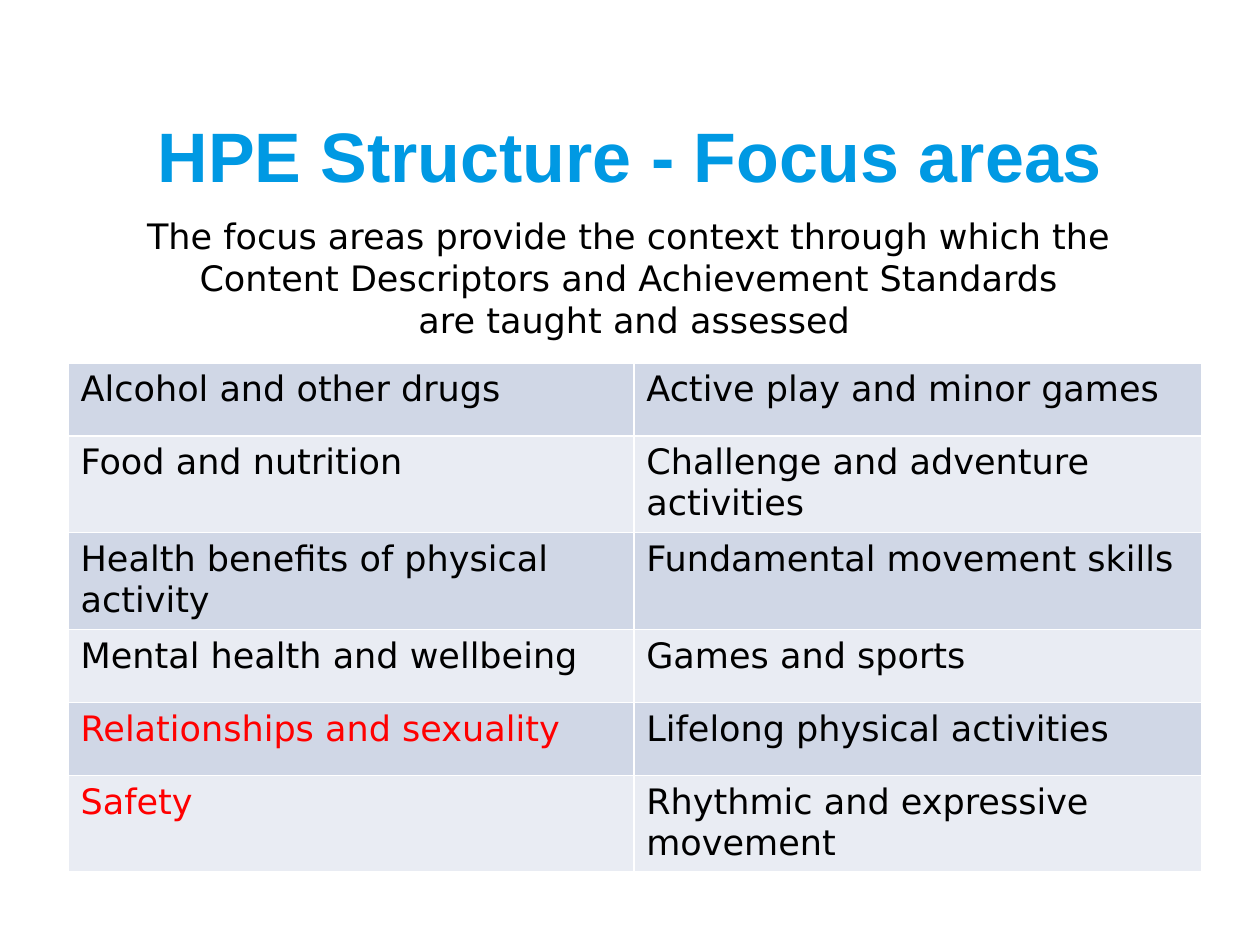
from lxml import etree
from pptx import Presentation
from pptx.dml.color import RGBColor
from pptx.enum.text import MSO_ANCHOR, PP_ALIGN
from pptx.oxml.ns import qn
from pptx.util import Inches, Pt

CENTER = PP_ALIGN.CENTER
TOP, MIDDLE = MSO_ANCHOR.TOP, MSO_ANCHOR.MIDDLE

TITLE = ["HPE Structure - Focus areas"]
INTRO = [
    "The focus areas provide the context through which the ",
    "Content Descriptors and Achievement Standards ",
    "are taught and assessed",
]
AREAS = [
    ("Alcohol and other drugs", "Active play and minor games"),
    ("Food and nutrition", "Challenge and adventure activities"),
    ("Health benefits of physical activity", "Fundamental movement skills"),
    ("Mental health and wellbeing", "Games and sports"),
    ("Relationships and sexuality", "Lifelong physical activities"),
    ("Safety", "Rhythmic and expressive movement"),
]
MARKED = {"Relationships and sexuality", "Safety"}
WIDTHS = (4.49, 4.51)
ROW = 0.58

THEME = {
    "title": ("Arial", 40, "0099E3", True),
    "body": ("DejaVu Sans", 20, "000000", False),
    "marked": ("DejaVu Sans", 20, "FF0000", False),
    "bands": ("D0D7E6", "E9ECF3"),
    "border": "FFFFFF",
}


def add_run(para, text, style):
    run = para.add_run()
    run.text = text
    font = run.font
    font.name, size, color, font.bold = THEME[style]
    font.size = Pt(size)
    font.color.rgb = RGBColor.from_string(color)


def add_text(slide, place, lines, style, anchor):
    frame = slide.shapes.add_textbox(*map(Inches, place)).text_frame
    frame.word_wrap = True
    frame.vertical_anchor = anchor
    for i, line in enumerate(lines):
        para = frame.add_paragraph() if i else frame.paragraphs[0]
        para.alignment = CENTER
        add_run(para, line, style)


def add_border(cell):
    props = cell._tc.get_or_add_tcPr()
    for i, side in enumerate(("lnL", "lnR", "lnT", "lnB")):
        line = etree.Element(qn("a:" + side), w=str(Pt(1)))
        fill = etree.SubElement(line, qn("a:solidFill"))
        etree.SubElement(fill, qn("a:srgbClr"), val=THEME["border"])
        props.insert(i, line)


def add_areas(slide):
    place = (0.54, 2.88, sum(WIDTHS), ROW * len(AREAS))
    table = slide.shapes.add_table(len(AREAS), len(WIDTHS), *map(Inches, place)).table
    table.first_row = False
    for col, width in zip(table.columns, WIDTHS):
        col.width = Inches(width)
    for r, names in enumerate(AREAS):
        table.rows[r].height = Inches(ROW)
        for c, name in enumerate(names):
            cell = table.cell(r, c)
            cell.fill.solid()
            cell.fill.fore_color.rgb = RGBColor.from_string(THEME["bands"][r % 2])
            add_border(cell)
            style = "marked" if name in MARKED else "body"
            add_run(cell.text_frame.paragraphs[0], name, style)


def main():
    deck = Presentation()
    deck.slide_width, deck.slide_height = Inches(10), Inches(7.5)
    slide = deck.slides.add_slide(deck.slide_layouts[6])
    add_text(slide, (0.75, 0.67, 8.5, 1.11), TITLE, "title", MIDDLE)
    add_areas(slide)
    add_text(slide, (0.35, 1.65, 9.37, 1.11), INTRO, "body", TOP)
    deck.save("out.pptx")


if __name__ == "__main__":
    main()
